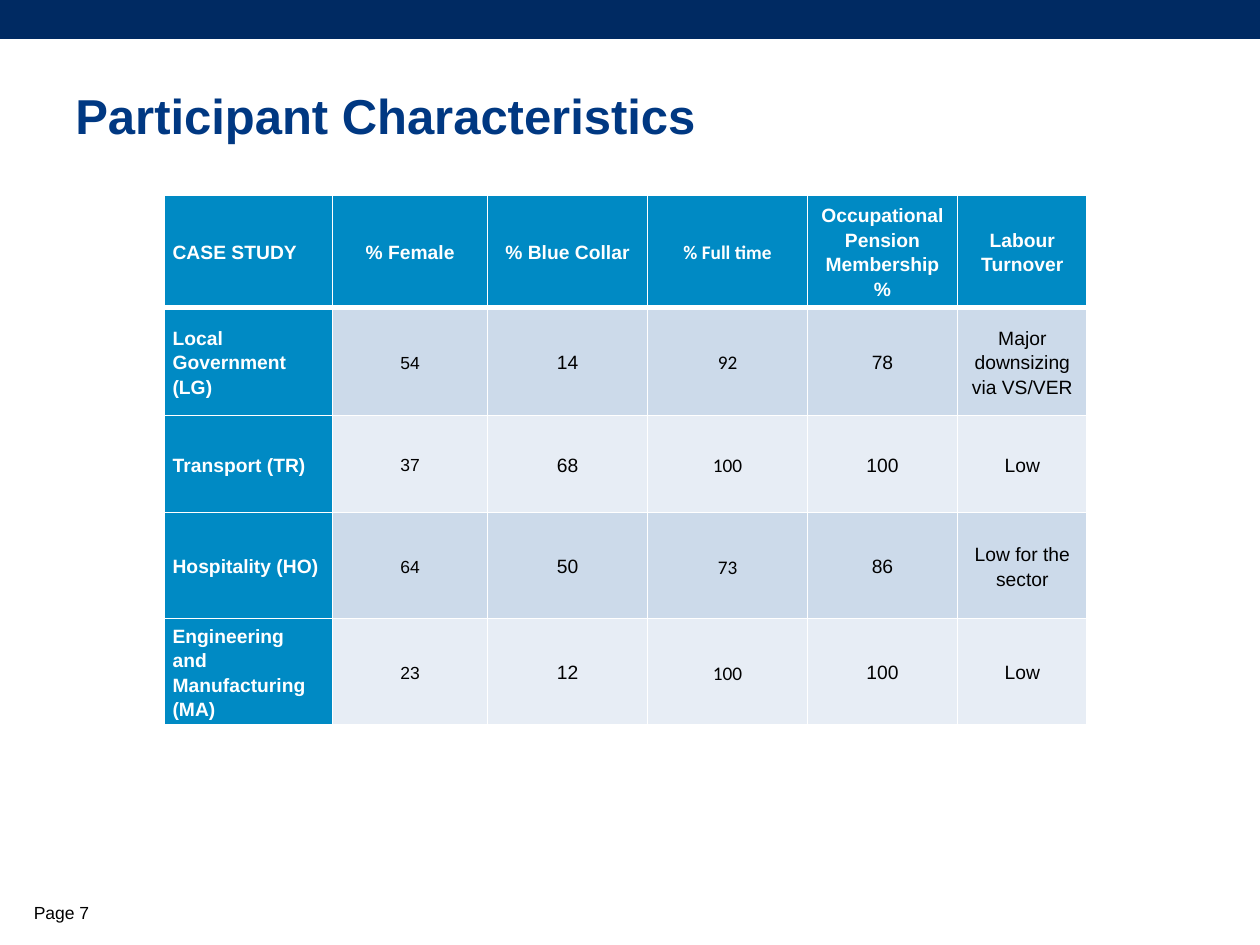
from lxml.etree import SubElement
from pptx import Presentation
from pptx.dml.color import RGBColor
from pptx.enum.shapes import MSO_SHAPE
from pptx.enum.text import MSO_ANCHOR, PP_ALIGN
from pptx.oxml.ns import qn
from pptx.util import Inches, Pt

COLORS = {
    "banner": "002A62", "title": "003882", "header": "008AC4",
    "odd": "CCDAEA", "even": "E7EDF5", "white": "FFFFFF", "black": "000000",
}


def write(frame, text, color, **font_format):
    """Put text in the first paragraph of a frame and return that paragraph."""
    para = frame.paragraphs[0]
    span = para.add_run()
    span.text = text
    for name, value in font_format.items():
        setattr(span.font, name, value)
    span.font.color.rgb = RGBColor.from_string(COLORS[color])
    return para


def add_borders(cell, widths):
    """Draw white cell borders; widths maps a border tag to points."""
    properties = cell._tc.get_or_add_tcPr()
    for position, (tag, width) in enumerate(widths.items()):
        line = SubElement(properties, qn(f"a:{tag}"), w=str(Pt(width)))
        properties.insert(position, line)
        fill = SubElement(line, qn("a:solidFill"))
        SubElement(fill, qn("a:srgbClr"), val=COLORS["white"])


deck = Presentation()
deck.slide_width, deck.slide_height = Inches(10), Inches(7.5)
page = deck.slides.add_slide(deck.slide_layouts[6])

banner = page.shapes.add_shape(MSO_SHAPE.RECTANGLE, 0, 0, Inches(10), Inches(0.31))
banner.shadow.inherit = False
banner.fill.solid()
banner.fill.fore_color.rgb = RGBColor.from_string(COLORS["banner"])
banner.line.fill.background()

# Title and page number
labels = [
    ("Participant Characteristics", (0.5, 0.6, 9.07, 0.63), "title", 28, True),
    ("Page 7", (0.17, 7.1, 0.74, 0.29), "black", 10, False),
]
for text, place, color, size, bold in labels:
    box = page.shapes.add_textbox(*map(Inches, place))
    box.text_frame.word_wrap = True
    box.text_frame.vertical_anchor = MSO_ANCHOR.MIDDLE
    write(box.text_frame, text, color, name="Arial", size=Pt(size), bold=bold)

# Table of case studies
rows = [
    ["CASE STUDY", "% Female", "% Blue Collar", "% Full time",
     "Occupational Pension Membership %", "Labour Turnover"],
    ["Local Government (LG)", "54", "14", "92", "78", "Major downsizing via VS/VER"],
    ["Transport (TR)", "37", "68", "100", "100", "Low"],
    ["Hospitality (HO)", "64", "50", "73", "86", "Low for the sector"],
    ["Engineering and Manufacturing (MA)", "23", "12", "100", "100", "Low"],
]
column_widths = [1.34, 1.23, 1.27, 1.27, 1.19, 1.03]
row_heights = [0.89, 0.86, 0.77, 0.84, 0.74]
female_column, full_time_column = 1, 3
cell_format = {
    "vertical_anchor": MSO_ANCHOR.MIDDLE,
    "margin_left": Inches(0.07), "margin_right": Inches(0.07),
    "margin_top": 0, "margin_bottom": 0,
}

table = page.shapes.add_table(
    len(rows), len(column_widths), Inches(1.3), Inches(1.55),
    Inches(sum(column_widths)), Inches(sum(row_heights))).table
for column, width in zip(table.columns, column_widths):
    column.width = Inches(width)
for row, height in zip(table.rows, row_heights):
    row.height = Inches(height)

for r, texts in enumerate(rows):
    for c, text in enumerate(texts):
        cell = table.cell(r, c)
        for name, value in cell_format.items():
            setattr(cell, name, value)
        heading = r == 0 or c == 0
        band = "header" if heading else "odd" if r % 2 else "even"
        cell.fill.solid()
        cell.fill.fore_color.rgb = RGBColor.from_string(COLORS[band])
        add_borders(cell, {"lnL": 1, "lnR": 1, "lnT": 3 if r == 1 else 1,
                           "lnB": 3 if r == 0 else 1})
        para = write(
            cell.text_frame, text, "white" if heading else "black",
            name="Calibri" if c == full_time_column else "Arial",
            size=Pt(10 if c == female_column and not heading else 11),
            bold=heading)
        para.alignment = PP_ALIGN.LEFT if c == 0 else PP_ALIGN.CENTER
        para.line_spacing = 1.15

deck.save("out.pptx")
